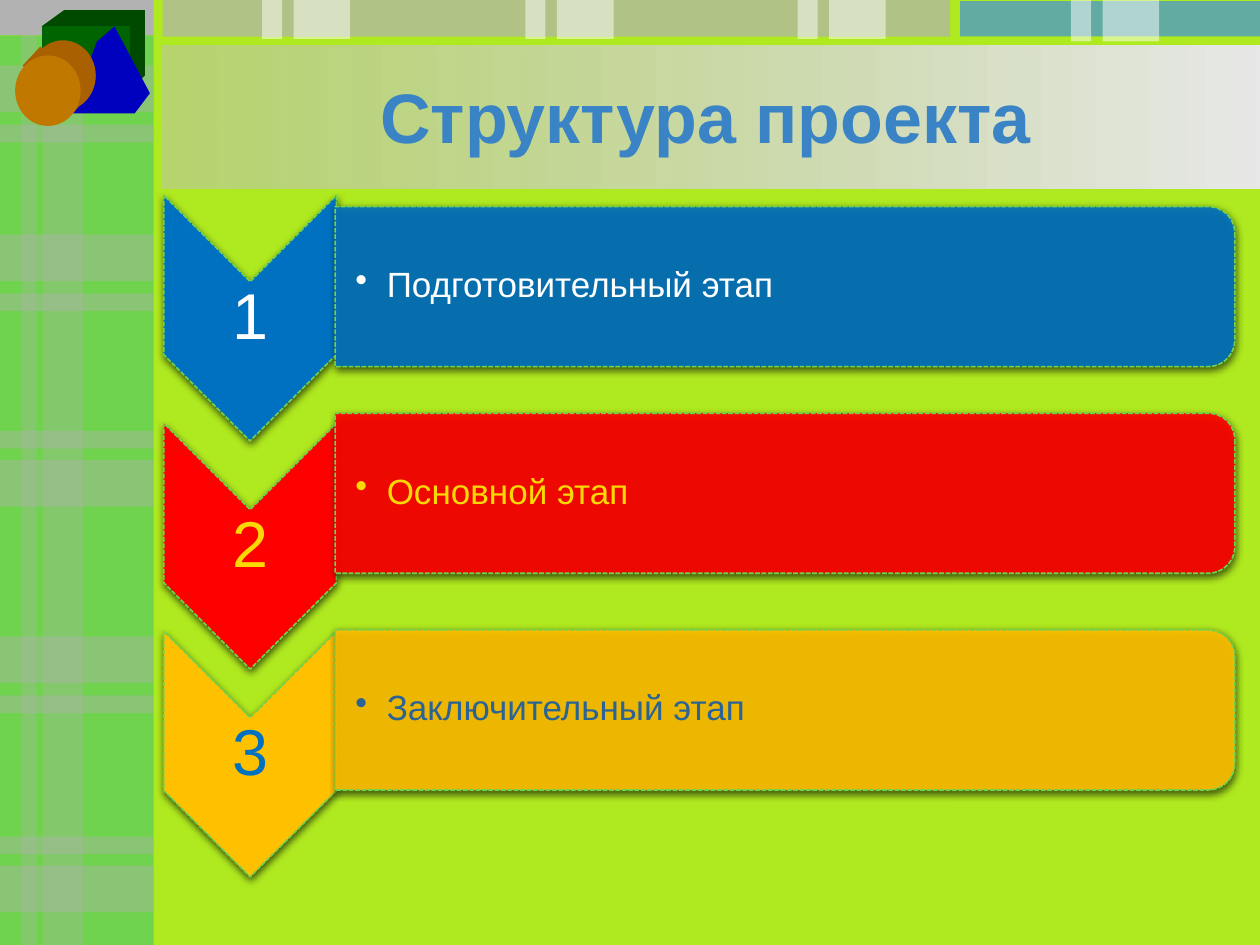
from lxml import etree
from pptx import Presentation
from pptx.dml.color import RGBColor
from pptx.enum.dml import MSO_LINE
from pptx.enum.shapes import MSO_SHAPE
from pptx.enum.text import MSO_ANCHOR, PP_ALIGN
from pptx.oxml.ns import qn
from pptx.util import Inches, Pt

RECT = MSO_SHAPE.RECTANGLE
OVAL = MSO_SHAPE.OVAL
CHEVRON = MSO_SHAPE.CHEVRON
BAR = MSO_SHAPE.ROUND_2_SAME_RECTANGLE
DASH = MSO_LINE.SQUARE_DOT
MIDDLE = MSO_ANCHOR.MIDDLE
LEFT, CENTER = PP_ALIGN.LEFT, PP_ALIGN.CENTER

LIME = RGBColor(0xAF, 0xE9, 0x1F)
GREEN = RGBColor(0x70, 0xD3, 0x4D)
GRAY = RGBColor(0xB2, 0xB2, 0xB2)
SILVER = RGBColor(0xC0, 0xC0, 0xC0)
PALE = RGBColor(0xE8, 0xE8, 0xE8)
SKY = RGBColor(0x41, 0x92, 0xDB)
WHITE = RGBColor(0xFF, 0xFF, 0xFF)
BLUE = RGBColor(0x00, 0x70, 0xC0)
RED = RGBColor(0xFF, 0x00, 0x00)
GOLD = RGBColor(0xFF, 0xC0, 0x00)
YELLOW = RGBColor(0xFD, 0xD9, 0x03)
STEEL = RGBColor(0x2B, 0x63, 0x95)
TITLE = RGBColor(0x3A, 0x84, 0xC6)
FOREST = RGBColor(0x00, 0x64, 0x00)
PINE = RGBColor(0x00, 0x4A, 0x00)
NAVY = RGBColor(0x00, 0x00, 0xBF)
RUST = RGBColor(0xA8, 0x60, 0x00)
AMBER = RGBColor(0xC0, 0x78, 0x00)

# Number, label, chevron top, bar top, fill, number colour, label colour
STAGES = [
    ("1", "Подготовительный этап", 1.55, 1.64, BLUE, WHITE, WHITE),
    ("2", "Основной этап", 3.36, 3.28, RED, YELLOW, YELLOW),
    ("3", "Заключительный этап", 5.01, 5.0, GOLD, BLUE, STEEL),
]


def fade(shape, alpha):
    """Set the opacity, in percent, of the first colour in a shape."""
    color = next(shape.element.iter(qn("a:srgbClr")))
    etree.SubElement(color, qn("a:alpha"), val=str(alpha * 1000))


def add_box(slide, kind, left, top, width, height, color, alpha=100):
    shape = slide.shapes.add_shape(
        kind, Inches(left), Inches(top), Inches(width), Inches(height))
    shape.shadow.inherit = False
    shape.line.fill.background()
    shape.fill.solid()
    shape.fill.fore_color.rgb = color
    if alpha < 100:
        fade(shape, alpha)
    return shape


def add_solid(slide, points, color):
    """Draw a polygon whose points are in hundredths of an inch."""
    path = slide.shapes.build_freeform(*points[0], scale=Inches(0.01))
    path.add_line_segments(points[1:])
    shape = path.convert_to_shape()
    shape.shadow.inherit = False
    shape.fill.solid()
    shape.fill.fore_color.rgb = color
    shape.line.fill.background()


def add_turned(slide, kind, left, top, width, height, color, alpha=100):
    """Place a dashed, shadowed shape so that it fills the box once turned."""
    shift = (width - height) / 2
    shape = add_box(slide, kind, left + shift, top - shift,
                    height, width, color, alpha)
    shape.rotation = 90
    shape.line.color.rgb = GREEN
    shape.line.width = Pt(0.9)
    shape.line.dash_style = DASH
    effects = next(shape.element.iter(qn("a:effectLst")))
    shadow = etree.SubElement(
        effects, qn("a:outerShdw"), blurRad=str(Pt(4.5)), dist=str(Pt(1.5)),
        dir="5400000", algn="ctr", rotWithShape="0")
    black = etree.SubElement(shadow, qn("a:srgbClr"), val="000000")
    etree.SubElement(black, qn("a:alpha"), val="63000")


def add_text(slide, text, left, top, width, height, size, color,
             align=LEFT, inset=0.03, bold=False):
    box = slide.shapes.add_textbox(
        Inches(left), Inches(top), Inches(width), Inches(height))
    frame = box.text_frame
    frame.word_wrap = True
    frame.vertical_anchor = MIDDLE
    frame.margin_left = Inches(inset)
    frame.margin_right = frame.margin_top = frame.margin_bottom = Inches(0.03)
    para = frame.paragraphs[0]
    para.text = text
    para.alignment = align
    para.font.name = "Arial"
    para.font.size = Pt(size)
    para.font.bold = bold
    para.font.color.rgb = color
    return para


def add_bullet(para):
    props = para._p.get_or_add_pPr()
    props.set("marL", str(Inches(0.25)))
    props.set("indent", str(Inches(-0.25)))
    bullet = etree.Element(qn("a:buChar"), char="•")
    props.insert_element_before(bullet, "a:tabLst", "a:defRPr", "a:extLst")


def add_plaid(slide):
    # Side panel and its corner
    add_box(slide, RECT, 0, 0.28, 1.22, 7.22, GREEN)
    add_box(slide, RECT, 0, 0, 1.22, 0.28, GRAY)
    for left, width in ((0.17, 0.12), (0.34, 0.32)):
        add_box(slide, RECT, left, 0, width, 7.5, GRAY, 30)
    # Cross bands: a wide one with a thin one below or above
    for top, gap in ((0.52, 0.47), (1.86, 0.47), (3.65, -0.23),
                     (5.05, 0.47), (6.87, -0.23)):
        add_box(slide, RECT, 0, top, 1.22, 0.37, GRAY, 40)
        add_box(slide, RECT, 0, top + gap, 1.22, 0.14, GRAY, 40)


def add_header(slide):
    # Top strips with white stripes
    add_box(slide, RECT, 1.29, 0, 6.25, 0.29, GRAY, 70)
    add_box(slide, RECT, 7.62, 0.01, 2.38, 0.28, SKY, 70)
    for left, height in ((2.08, 0.31), (4.17, 0.31), (6.33, 0.31), (8.5, 0.33)):
        add_box(slide, RECT, left, 0, 0.16, height, WHITE, 50)
        add_box(slide, RECT, left + 0.25, 0, 0.45, height, WHITE, 50)
    # Title band
    band = add_box(slide, RECT, 1.29, 0.36, 8.71, 1.14, PALE)
    band.fill.gradient()
    band.fill.gradient_angle = 0
    for stop, color, spot in zip(band.fill.gradient_stops, (SILVER, PALE), (0, 1)):
        stop.color.rgb = color
        stop.position = spot
    fade(band, 50)
    add_text(slide, "Структура проекта", 1.4, 0.5, 7.1, 0.83, 40, TITLE,
             inset=1.62, bold=True)


def add_blocks(slide):
    # Cube, prism and cylinder
    add_solid(slide, [(33, 21), (51, 8), (115, 8), (115, 60), (103, 72)], PINE)
    add_solid(slide, [(33, 21), (103, 21), (103, 90), (33, 90)], FOREST)
    add_solid(slide, [(91, 21), (119, 74), (107, 90), (56, 90), (77, 33)], NAVY)
    add_box(slide, OVAL, 0.24, 0.32, 0.52, 0.56, RUST)
    add_solid(slide, [(18, 52), (32, 37), (70, 76), (57, 91)], RUST)
    add_box(slide, OVAL, 0.12, 0.44, 0.52, 0.56, AMBER)


def add_stage(slide, number, label, top, bar, fill, tint, ink):
    add_turned(slide, CHEVRON, 1.3, top, 1.37, 1.95, fill)
    add_text(slide, number, 1.3, top + 0.68, 1.37, 0.59, 37, tint,
             CENTER).line_spacing = 0.9
    add_turned(slide, BAR, 2.66, bar, 7.14, 1.27, fill, 90)
    para = add_text(slide, label, 2.66, bar + 0.06, 7.08, 1.14, 20, ink,
                    inset=0.16)
    para.line_spacing = 0.9
    add_bullet(para)


def main():
    deck = Presentation()
    deck.slide_width, deck.slide_height = Inches(10), Inches(7.5)
    slide = deck.slides.add_slide(deck.slide_layouts[6])
    slide.background.fill.solid()
    slide.background.fill.fore_color.rgb = LIME
    add_plaid(slide)
    add_header(slide)
    add_blocks(slide)
    for stage in STAGES:
        add_stage(slide, *stage)
    deck.save("out.pptx")


if __name__ == "__main__":
    main()
